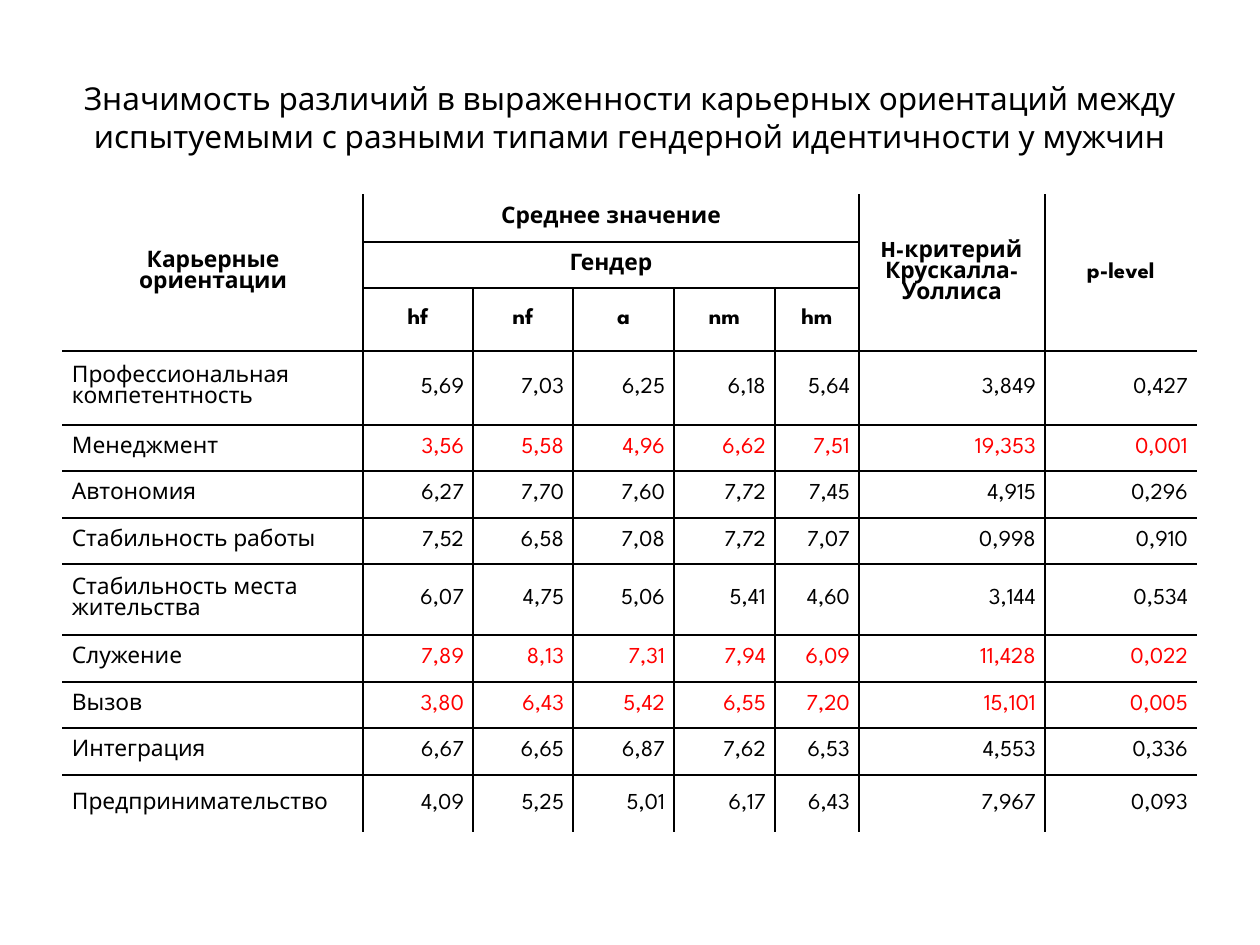
"""Build a slide with a table of career orientation scores by gender type."""
from dataclasses import dataclass

from lxml import etree
from pptx import Presentation
from pptx import util as u
from pptx.dml.color import RGBColor
from pptx.enum import text
from pptx.oxml.ns import qn

PX = 914400 // 126


@dataclass(frozen=True)
class Theme:
    font: str = "League Spartan"
    ink: str = "000000"
    paper: str = "FFFFFF"
    accent: str = "FF0000"
    title: int = 18
    title_line: float = 21.7
    body: int = 13
    body_line: int = 12
    border: int = 1


T = Theme()

TITLE = ("Значимость различий в выраженности карьерных ориентаций между "
         "испытуемыми с разными типами гендерной идентичности у мужчин")
TITLE_BOX = (63, 38, 1134, 157)
TABLE_ORIGIN = (63, 195)
COLUMNS = (300, 110, 100, 101, 101, 84, 186, 152)
HEADER_ROWS = (47, 46, 63)
HEADERS = [
    (0, 0, 3, 1, "Карьерные ориентации"),
    (0, 1, 1, 5, "Среднее значение"),
    (1, 1, 1, 5, "Гендер"),
    (0, 6, 3, 1, "H-критерий Крускалла-Уоллиса"),
    (0, 7, 3, 1, "p-level"),
] + [(2, c, 1, 1, name) for c, name in enumerate(("hf", "nf", "a", "nm", "hm"), 1)]
SCORES = [
    (74, "Профессиональная компетентность", "5,69 7,03 6,25 6,18 5,64 3,849 0,427"),
    (46, "Менеджмент", "3,56 5,58 4,96 6,62 7,51 19,353 0,001"),
    (47, "Автономия", "6,27 7,70 7,60 7,72 7,45 4,915 0,296"),
    (46, "Стабильность работы", "7,52 6,58 7,08 7,72 7,07 0,998 0,910"),
    (71, "Стабильность места жительства", "6,07 4,75 5,06 5,41 4,60 3,144 0,534"),
    (47, "Служение", "7,89 8,13 7,31 7,94 6,09 11,428 0,022"),
    (46, "Вызов", "3,80 6,43 5,42 6,55 7,20 15,101 0,005"),
    (47, "Интеграция", "6,67 6,65 6,87 7,62 6,53 4,553 0,336"),
    (58, "Предпринимательство", "4,09 5,25 5,01 6,17 6,43 7,967 0,093"),
]
SIGNIFICANCE = 0.05


def write(tf, content, size, line, align, color=T.ink, bold=False):
    p = tf.paragraphs[0]
    p.alignment = align
    p.line_spacing = u.Pt(line)
    r = p.add_run()
    r.text = content
    r.font.name = T.font
    r.font.size = u.Pt(size)
    r.font.bold = bold
    r.font.color.rgb = RGBColor.from_string(color)


def style_cell(cell, outer):
    cell.margin_left = cell.margin_right = 9 * PX
    cell.margin_top = cell.margin_bottom = 0
    cell.vertical_anchor = text.MSO_ANCHOR.MIDDLE
    tc_pr = cell._tc.get_or_add_tcPr()
    for side in "LRTB":
        ln = etree.SubElement(tc_pr, qn(f"a:ln{side}"), w=str(u.Pt(T.border)))
        fill = etree.SubElement(ln, qn("a:solidFill"))
        etree.SubElement(fill, qn("a:srgbClr"), val=T.paper if side in outer else T.ink)
    cell.fill.background()


def add_title(slide):
    tf = slide.shapes.add_textbox(*(v * PX for v in TITLE_BOX)).text_frame
    tf.word_wrap = True
    tf.vertical_anchor = text.MSO_ANCHOR.MIDDLE
    write(tf, TITLE, T.title, T.title_line, text.PP_ALIGN.CENTER)


def add_scores(slide):
    heights = HEADER_ROWS + tuple(row[0] for row in SCORES)
    n_rows, n_cols = len(heights), len(COLUMNS)
    left, top = TABLE_ORIGIN
    table = slide.shapes.add_table(n_rows, n_cols, left * PX, top * PX,
                                   sum(COLUMNS) * PX, sum(heights) * PX).table
    table.first_row = table.horz_banding = False
    for column, width in zip(table.columns, COLUMNS):
        column.width = width * PX
    for row, height in zip(table.rows, heights):
        row.height = height * PX

    for i in range(n_rows):
        for j in range(n_cols):
            edges = {"L": j == 0, "R": j == n_cols - 1, "T": i == 0, "B": i == n_rows - 1}
            style_cell(table.cell(i, j), [side for side, on in edges.items() if on])

    for i, j, down, across, name in HEADERS:
        cell = table.cell(i, j)
        if down * across > 1:
            cell.merge(table.cell(i + down - 1, j + across - 1))
        write(cell.text_frame, name, T.body, T.body_line, text.PP_ALIGN.CENTER, bold=True)

    for i, (_, name, values) in enumerate(SCORES, len(HEADER_ROWS)):
        values = values.split()
        significant = float(values[-1].replace(",", ".")) < SIGNIFICANCE
        color = T.accent if significant else T.ink
        write(table.cell(i, 0).text_frame, name, T.body, T.body_line, text.PP_ALIGN.LEFT)
        for j, value in enumerate(values, 1):
            write(table.cell(i, j).text_frame, value, T.body, T.body_line,
                  text.PP_ALIGN.RIGHT, color)


def main():
    prs = Presentation()
    prs.slide_width, prs.slide_height = 1260 * PX, 945 * PX
    slide = prs.slides.add_slide(prs.slide_layouts[6])
    add_title(slide)
    add_scores(slide)
    prs.save("out.pptx")


if __name__ == "__main__":
    main()
